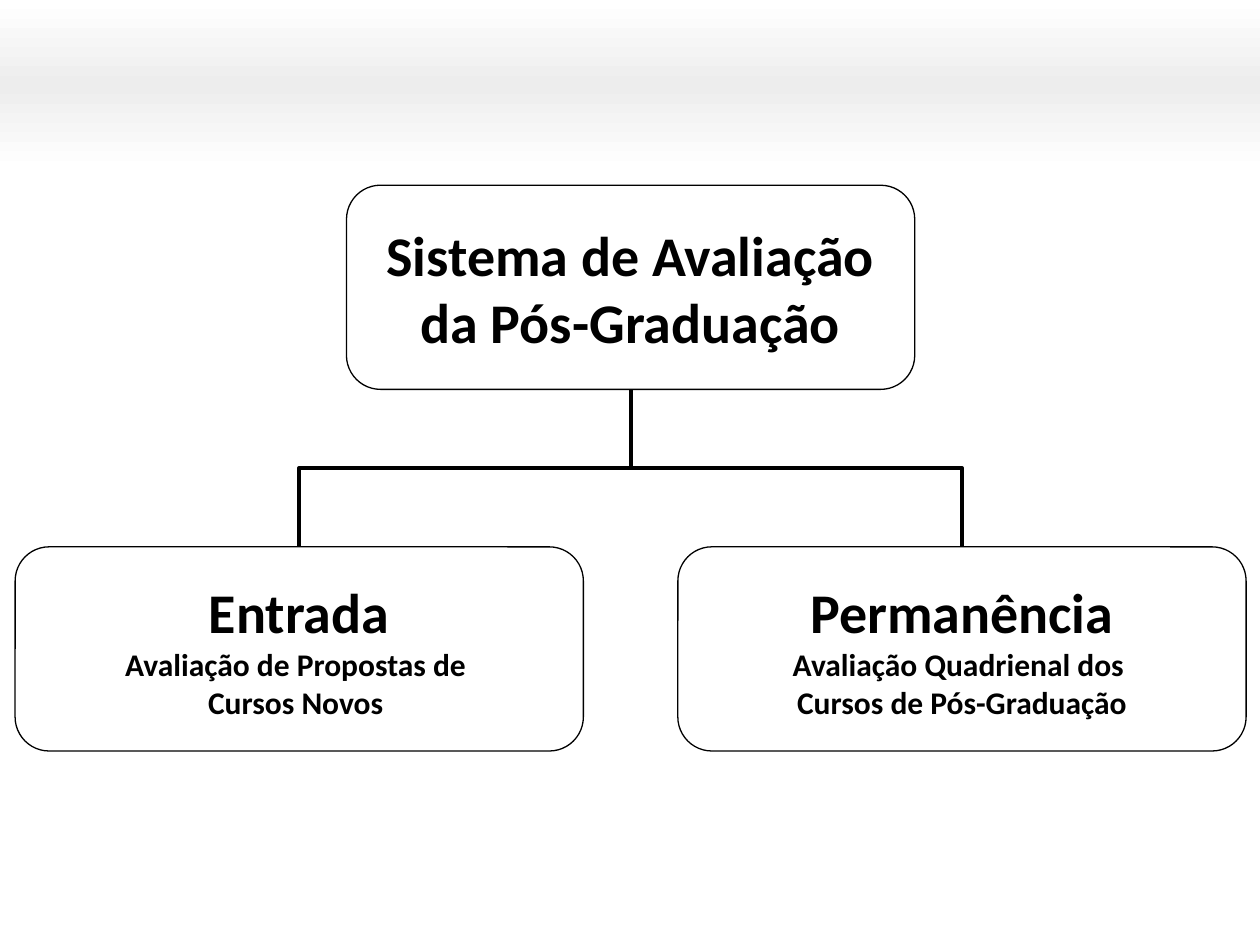
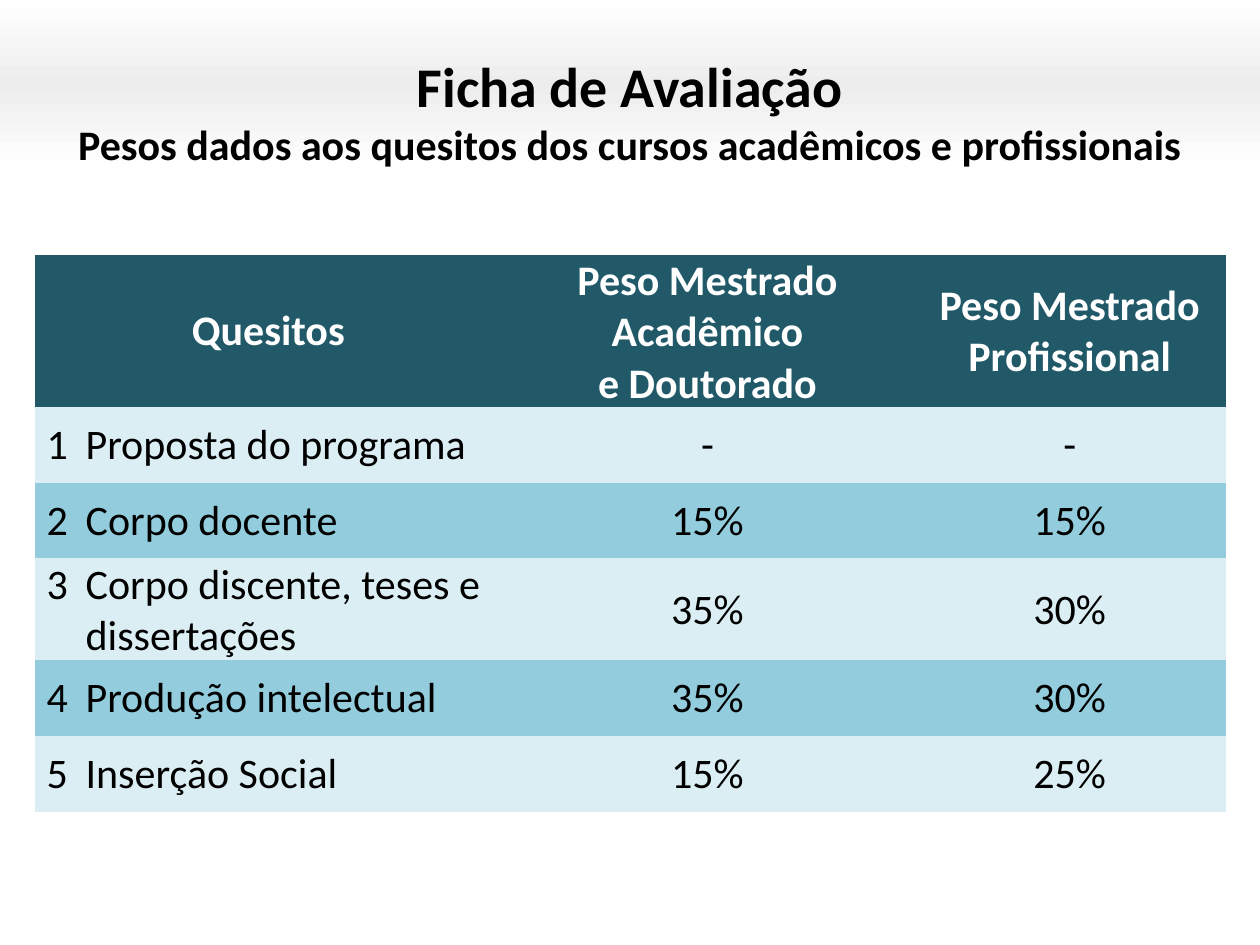
from dataclasses import dataclass

from lxml import etree
from pptx import Presentation
from pptx import util as u
from pptx.dml.color import RGBColor
from pptx.enum import shapes, text
from pptx.oxml import ns

FONT = "Calibri"
BLACK, WHITE, BAND_GREY = "000000", "FFFFFF", "EDEDED"
HEADER_FILL, ROW_FILLS = "215968", ("DBEEF4", "93CDDD")
SLIDE_WIDTH, BAND_HEIGHT = 10, 1.35
NODE_WIDTH, NODE_HEIGHT = 4.51, 1.62
ROOT_LEFT, ROOT_TOP = 2.75, 1.47
BRANCH_OFFSET, BRANCH_TOP = 2.63, 4.34
NO_TABLE_STYLE = "{2D5ABB26-0587-4C30-8999-92F81FD0307C}"


@dataclass
class Line:
    words: str
    size: int
    bold: bool = True
    color: str = BLACK


@dataclass
class Node:
    left: float
    top: float
    lines: list[Line]


@dataclass
class Criterion:
    name: str
    academic: str
    professional: str
    height: float = 0.6


ROOT = Node(ROOT_LEFT, ROOT_TOP, [Line("Sistema de Avaliação", 32), Line("da Pós-Graduação", 32)])
BRANCHES = {
    -1: [Line("Entrada", 32), Line("Avaliação de Propostas de ", 18), Line("Cursos Novos ", 18)],
    1: [Line("Permanência", 32), Line("Avaliação Quadrienal dos ", 18), Line("Cursos de Pós-Graduação", 18)],
}
TITLE = [
    Line("Ficha de Avaliação", 32),
    Line("Pesos dados aos quesitos dos cursos acadêmicos e profissionais", 24),
]
COLUMN_WIDTHS = (3.7, 3.27, 2.48)
HEADER = Criterion("Quesitos", "Peso Mestrado Acadêmico\ve Doutorado", "Peso Mestrado Profissional", 1.21)
CRITERIA = [
    Criterion("Proposta do programa", "-", "-"),
    Criterion("Corpo docente", "15%", "15%"),
    Criterion("Corpo discente, teses e dissertações", "35%", "30%", 0.81),
    Criterion("Produção intelectual", "35%", "30%"),
    Criterion("Inserção Social", "15%", "25%"),
]


def rgb(value: str) -> RGBColor:
    return RGBColor.from_string(value)


def write(frame, lines: list[Line], align=text.PP_ALIGN.CENTER, hanging: float = 0) -> None:
    for index, line in enumerate(lines):
        para = frame.paragraphs[0] if index == 0 else frame.add_paragraph()
        para.text = line.words
        para.alignment = align
        if hanging:
            indent = u.Inches(hanging)
            properties = para._p.get_or_add_pPr()
            properties.set("marL", str(indent))
            properties.set("indent", str(-indent))
            tabs = etree.SubElement(properties, ns.qn("a:tabLst"))
            etree.SubElement(tabs, ns.qn("a:tab"), pos=str(indent), algn="l")
        para.font.name = FONT
        para.font.size = u.Pt(line.size)
        para.font.bold = line.bold
        para.font.color.rgb = rgb(line.color)


def add_page(deck):
    page = deck.slides.add_slide(deck.slide_layouts[6])
    band = page.shapes.add_shape(
        shapes.MSO_SHAPE.RECTANGLE, 0, 0, u.Inches(SLIDE_WIDTH), u.Inches(BAND_HEIGHT)
    )
    band.shadow.inherit = False
    band.line.fill.background()
    band.fill.gradient()
    band.fill.gradient_angle = 270
    stops = band._element.spPr.find(".//" + ns.qn("a:gsLst"))
    for stop in list(stops):
        stops.remove(stop)
    for position, color in ((0, WHITE), (50000, BAND_GREY), (100000, WHITE)):
        stop = etree.SubElement(stops, ns.qn("a:gs"), pos=str(position))
        etree.SubElement(stop, ns.qn("a:srgbClr"), val=color)
    return page


def add_node(page, node: Node) -> None:
    box = page.shapes.add_shape(
        shapes.MSO_SHAPE.ROUNDED_RECTANGLE,
        *(u.Inches(length) for length in (node.left, node.top, NODE_WIDTH, NODE_HEIGHT)),
    )
    box.shadow.inherit = False
    box.fill.background()
    box.line.color.rgb = rgb(BLACK)
    box.line.width = u.Pt(0.75)
    frame = box.text_frame
    frame.word_wrap = False
    frame.vertical_anchor = text.MSO_ANCHOR.MIDDLE
    frame.margin_left = frame.margin_right = frame.margin_top = frame.margin_bottom = 0
    write(frame, node.lines)


def add_branch_line(page, side: int) -> None:
    root_bottom = ROOT_TOP + NODE_HEIGHT
    center_x = ROOT_LEFT + NODE_WIDTH / 2 + side * BRANCH_OFFSET / 2
    center_y = (root_bottom + BRANCH_TOP) / 2
    reach_x = side * (BRANCH_TOP - root_bottom) / 2
    reach_y = BRANCH_OFFSET / 2
    connector = page.shapes.add_connector(
        shapes.MSO_CONNECTOR.ELBOW,
        u.Inches(center_x - reach_x),
        u.Inches(center_y + reach_y),
        u.Inches(center_x + reach_x),
        u.Inches(center_y - reach_y),
    )
    properties = connector._element.spPr
    properties.find(ns.qn("a:xfrm")).set("rot", str((180 + side * 90) * 60000))
    connector.line.color.rgb = rgb(BLACK)
    connector.line.width = u.Pt(2.25)
    etree.SubElement(properties, ns.qn("a:effectLst"))


def add_system_page(deck) -> None:
    page = add_page(deck)
    for side in BRANCHES:
        add_branch_line(page, side)
    add_node(page, ROOT)
    for side, lines in BRANCHES.items():
        add_node(page, Node(ROOT_LEFT + side * BRANCH_OFFSET, BRANCH_TOP, lines))


def fill_cell(cell, line: Line, fill: str, numbered: bool) -> None:
    cell.fill.solid()
    cell.fill.fore_color.rgb = rgb(fill)
    cell.vertical_anchor = text.MSO_ANCHOR.MIDDLE
    cell.margin_left = u.Inches(0.09 if numbered else 0.01)
    cell.margin_right = cell.margin_top = u.Inches(0.01)
    cell.margin_bottom = 0
    if numbered:
        write(cell.text_frame, [line], text.PP_ALIGN.LEFT, hanging=0.31)
    else:
        write(cell.text_frame, [line])


def add_weights_page(deck) -> None:
    page = add_page(deck)
    title = page.shapes.add_textbox(0, u.Inches(0.36), u.Inches(SLIDE_WIDTH), u.Inches(1.04))
    title.text_frame.word_wrap = True
    write(title.text_frame, TITLE)

    rows = [HEADER, *CRITERIA]
    holder = page.shapes.add_table(
        len(rows), len(COLUMN_WIDTHS), u.Inches(0.28), u.Inches(2.02),
        u.Inches(sum(COLUMN_WIDTHS)), u.Inches(sum(row.height for row in rows)),
    )
    table = holder.table
    table.horz_banding = False
    table._tbl.tblPr.find(ns.qn("a:tableStyleId")).text = NO_TABLE_STYLE
    for column, width in zip(table.columns, COLUMN_WIDTHS):
        column.width = u.Inches(width)
    for number, row in enumerate(rows):
        table.rows[number].height = u.Inches(row.height)
        is_header = number == 0
        fill = HEADER_FILL if is_header else ROW_FILLS[(number - 1) % 2]
        name = row.name if is_header else f"{number}\t{row.name}"
        for column, words in enumerate((name, row.academic, row.professional)):
            line = Line(words, 24, is_header, WHITE if is_header else BLACK)
            fill_cell(table.cell(number, column), line, fill, column == 0 and not is_header)


def main() -> None:
    deck = Presentation()
    deck.slide_width = u.Inches(SLIDE_WIDTH)
    deck.slide_height = u.Inches(7.5)
    add_system_page(deck)
    add_weights_page(deck)
    deck.save("out.pptx")


if __name__ == "__main__":
    main()
